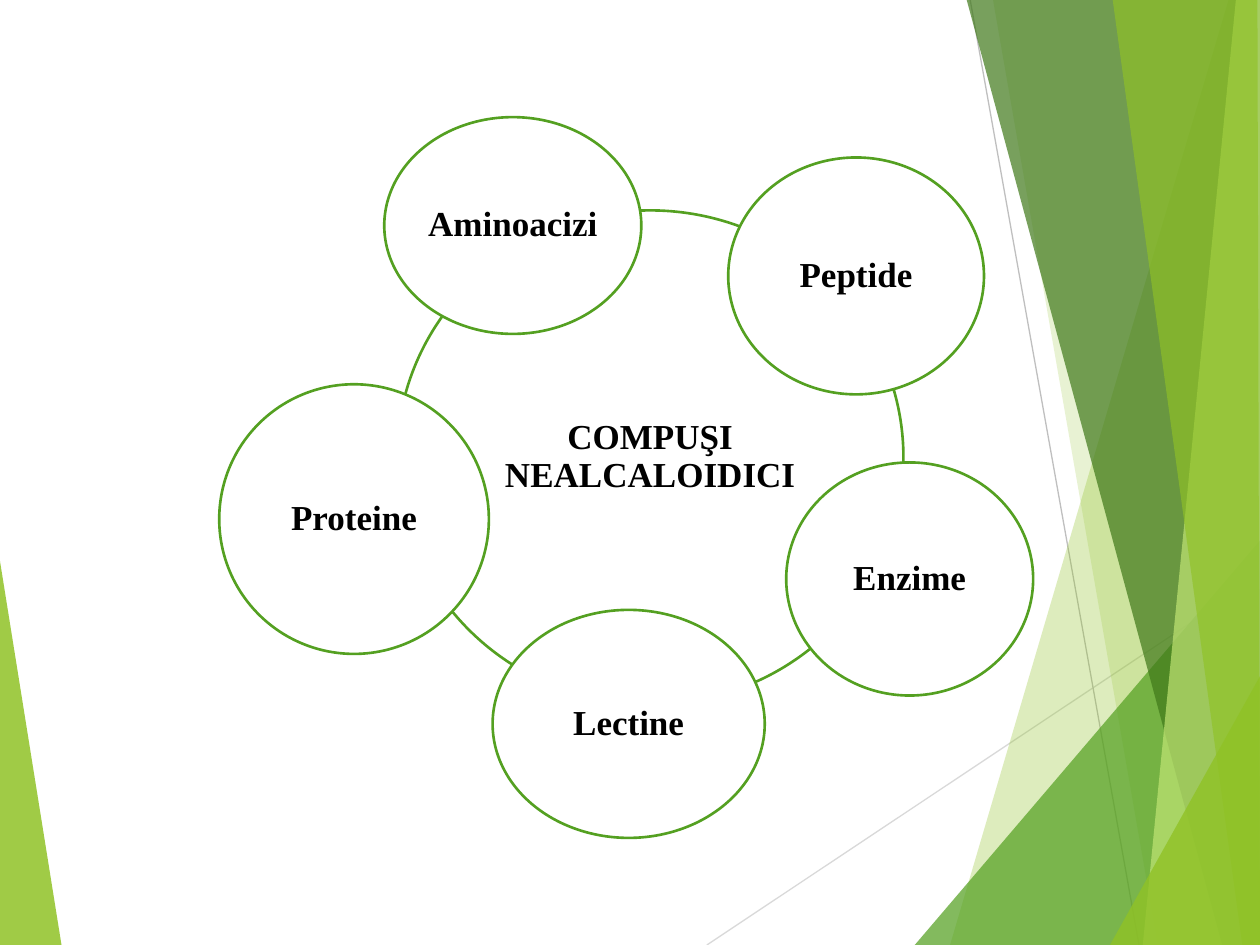
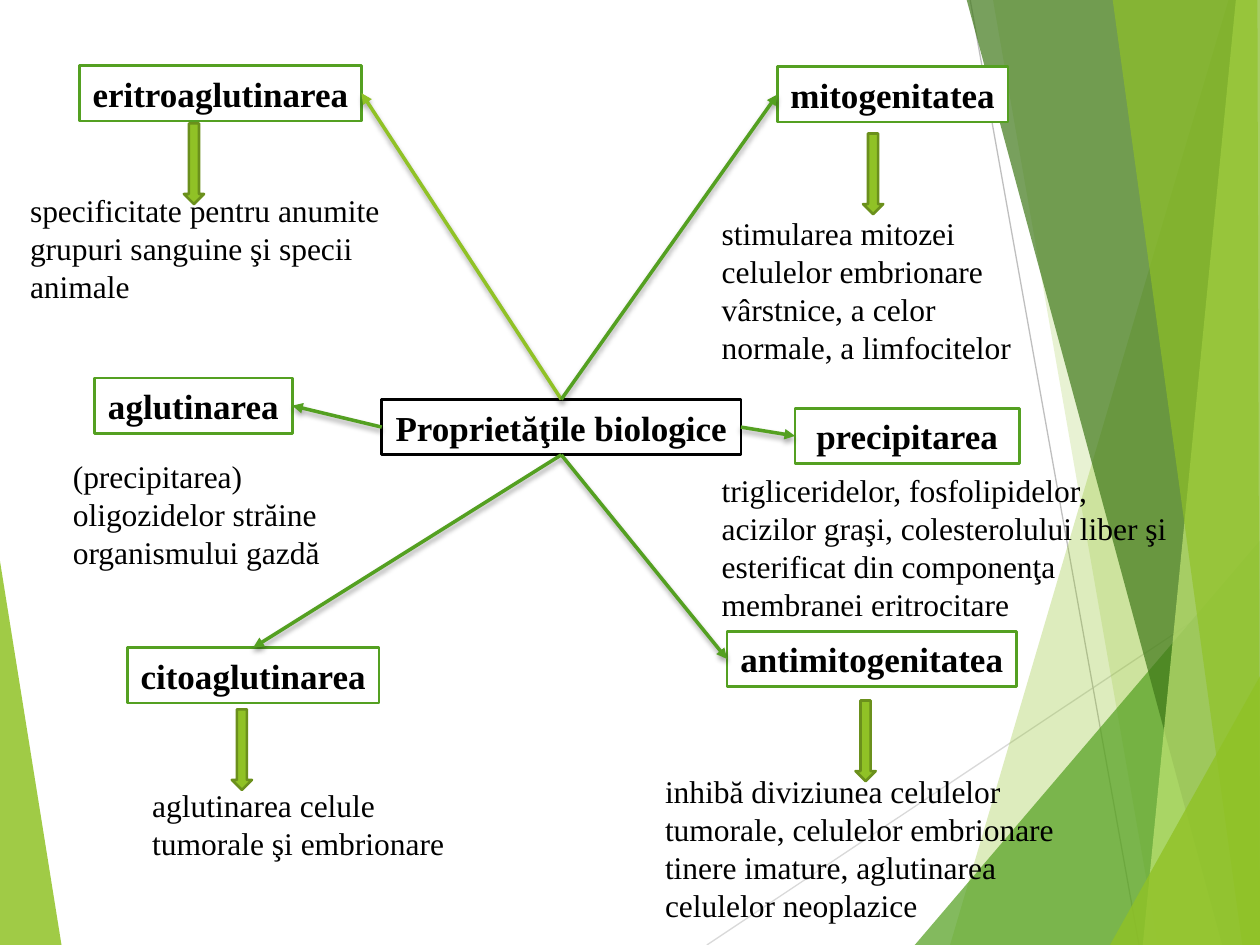
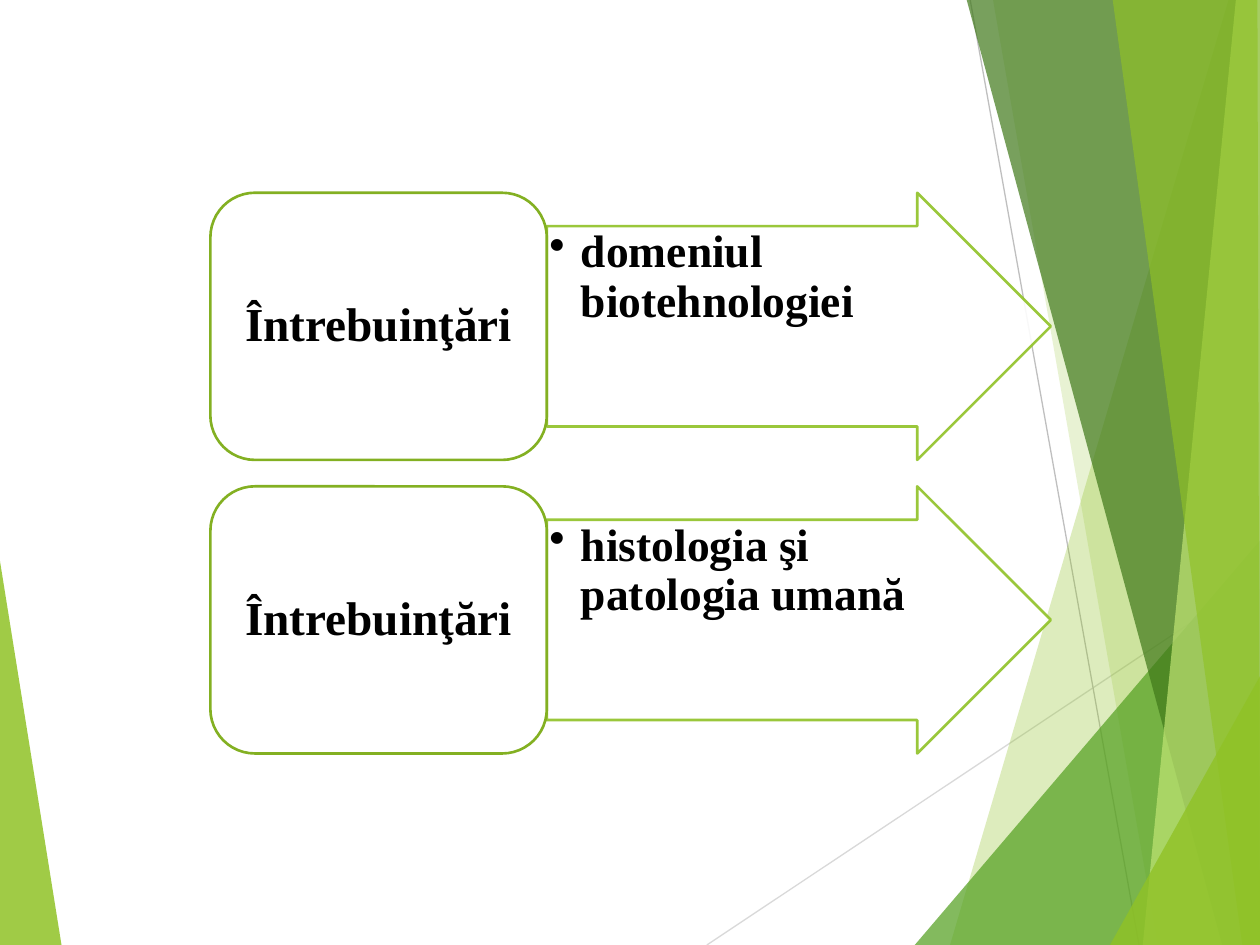
from lxml.etree import SubElement as Sub
from pptx import Presentation
from pptx.dml.color import RGBColor
from pptx.enum.shapes import MSO_CONNECTOR, MSO_SHAPE as Kind
from pptx.enum.text import MSO_ANCHOR as Anchor, PP_ALIGN as Align
from pptx.oxml.ns import qn
from pptx.util import Inches, Pt

FONT = "Times New Roman"
LIME, GREEN, PINE, PALE = "90C226", "54A021", "3F7819", "C0E474"
OLIVE, MOSS, WHITE, BLACK = "6B901C", "83B022", "FFFFFF", "000000"

# Backdrop: corner points, colour, opacity in percent
LEAF = ([(-0.01, 4.39), (0.49, 7.51), (-0.01, 7.5)], LIME, 85)
RAYS = [
    ((5.61, 7.5), (10.01, 4.57), "D9D9D9"),
    ((7.7, 0), (9.04, 7.5), "BFBFBF"),
]
WEDGES = [
    ([(9.75, 0), (7.54, 7.5), (10.02, 7.51), (10.01, 0)], LIME, 30),
    ([(7.88, -0.01), (9.19, 7.5), (10.01, 7.5), (10.01, -0.01)], LIME, 20),
    ([(7.26, 7.5), (10, 4.29), (10.01, 7.5)], GREEN, 72),
    ([(7.67, -0.01), (9.7, 7.5), (10.01, 7.5), (10.01, -0.01)], PINE, 70),
    ([(9.81, -0.01), (9.07, 7.5), (10.01, 7.5), (10, -0.01)], PALE, 70),
    ([(8.83, -0.01), (9.86, 7.5), (10, 7.5), (9.98, -0.01)], LIME, 65),
    ([(8.81, 7.5), (10.01, 5.35), (10.01, 7.5)], LIME, 80),
]

# Slide 1: the ring comes first, the circles lie over it
CIRCLES = [
    ("COMPUŞI NEALCALOIDICI", (3.15, 1.67, 4.02, 3.92)),
    ("Aminoacizi", (3.05, 0.93, 2.04, 1.72)),
    ("Enzime", (6.24, 3.67, 1.96, 1.85)),
    ("Lectine", (3.91, 4.84, 2.16, 1.81)),
    ("Proteine", (1.74, 3.05, 2.14, 2.14)),
    ("Peptide", (5.78, 1.25, 2.03, 1.88)),
]

# Slide 2
TOP, LEFT, BOTTOM, RIGHT = range(4)  # connection sites of a rectangle
TAG_H = 0.44
HUB = ("Proprietăţile biologice", (3.03, 3.17, 2.85))
# Tag, its left, top and width, hub site, tag site, line colour
TAGS = [
    ("eritroaglutinarea", (0.63, 0.52, 2.24), TOP, RIGHT, LIME),
    ("mitogenitatea", (6.17, 0.53, 1.83), TOP, LEFT, GREEN),
    ("citoaglutinarea", (1.01, 5.14, 2), BOTTOM, TOP, GREEN),
    ("antimitogenitatea", (5.77, 5.01, 2.3), BOTTOM, LEFT, GREEN),
    ("precipitarea", (6.31, 3.24, 1.78), RIGHT, LEFT, GREEN),
    ("aglutinarea", (0.75, 3, 1.57), LEFT, RIGHT, GREEN),
]
NOTES = [
    ("specificitate pentru anumite grupuri sanguine şi specii animale",
     (0.14, 1.47, 3.44, 1.01)),
    ("aglutinarea celule tumorale şi embrionare", (1.11, 6.19, 2.78, 0.71)),
    ("stimularea mitozei celulelor embrionare vârstnice, a celor normale, "
     "a limfocitelor", (5.63, 1.65, 2.76, 1.31)),
    ("inhibă diviziunea celulelor tumorale, celulelor embrionare tinere "
     "imature, aglutinarea celulelor neoplazice", (5.18, 6.08, 3.67, 1.31)),
    ("(precipitarea) oligozidelor străine organismului gazdă",
     (0.48, 3.58, 2.56, 1.01)),
    ("trigliceridelor, fosfolipidelor, acizilor graşi, colesterolului liber "
     "şi esterificat din componenţa membranei eritrocitare",
     (5.63, 3.69, 3.9, 1.31)),
]
DOWNS = [(1.46, 0.98), (1.84, 5.63), (6.85, 1.06), (6.79, 5.56)]

# Slide 3
USES = ["domeniul biotehnologiei", "histologia şi patologia umană"]
USE_X, USE_Y, USE_W, USE_H, USE_STEP, ARROW_W = 1.67, 1.53, 2.67, 2.12, 2.33, 4


def rgb(code):
    return RGBColor.from_string(code)


def inches(vals):
    return [Inches(v) for v in vals]


def write(shape, text, size=20, bold=True, align=Align.CENTER,
          anchor=Anchor.MIDDLE, pad=(0.03, 0.03), wrap=True, space=0.9,
          bullet=False):
    frame = shape.text_frame
    frame.word_wrap, frame.vertical_anchor = wrap, anchor
    frame.margin_left = frame.margin_right = Inches(pad[0])
    frame.margin_top = frame.margin_bottom = Inches(pad[1])
    para = frame.paragraphs[0]
    para.text, para.alignment, para.line_spacing = text, align, space
    if bullet:
        props = para._p.get_or_add_pPr()
        props.set("marL", str(Inches(0.25)))
        props.set("indent", str(-Inches(0.25)))
        Sub(props, qn("a:buChar"), char="•")
    font = para.runs[0].font
    font.name, font.size, font.bold = FONT, Pt(size), bold
    font.color.rgb = rgb(BLACK)


def paint(shape, fill, line=None, alpha=None):
    """Set fill and outline; alpha is the opacity of both in percent."""
    shape.shadow.inherit = False
    shape.fill.solid()
    shape.fill.fore_color.rgb = rgb(fill)
    if line:
        shape.line.color.rgb, shape.line.width = rgb(line), Pt(1.5)
    else:
        shape.line.fill.background()
    if alpha:
        for color in shape.element.xpath("p:spPr//a:srgbClr"):
            Sub(color, qn("a:alpha"), val=str(alpha * 1000))


def draw(slide, kind, box, fill, line, alpha=None):
    shape = slide.shapes.add_shape(kind, *inches(box))
    paint(shape, fill, line, alpha)
    return shape


def link(slide, start, end, color, width):
    """Add a straight line and return it with its empty effect list."""
    line = slide.shapes.add_connector(
        MSO_CONNECTOR.STRAIGHT, *inches(start + end))
    line.line.color.rgb, line.line.width = rgb(color), Pt(width)
    return line, Sub(line.element.spPr, qn("a:effectLst"))


def wedge(slide, points, color, alpha):
    (x, y), *rest = [inches(p) for p in points]
    path = slide.shapes.build_freeform(x, y)
    path.add_line_segments(rest, close=True)
    paint(path.convert_to_shape(), color, alpha=alpha)


def dress(layout, slide):
    """Build the backdrop on a still empty slide and move it to the layout."""
    for holder in list(layout.placeholders):
        layout.shapes.element.remove(holder.element)
    wedge(slide, *LEAF)
    for start, end, color in RAYS:
        link(slide, start, end, color, 0.75)
    for part in WEDGES:
        wedge(slide, *part)
    for shape in list(slide.shapes):
        layout.shapes.element.append(shape.element)


def show_ring(slide):
    for text, box in CIRCLES:
        write(draw(slide, Kind.OVAL, box, WHITE, GREEN), text)


def add_tag(slide, text, place, line):
    tag = draw(slide, Kind.RECTANGLE, place + (TAG_H,), WHITE, line)
    write(tag, text, pad=(0.1, 0.05), wrap=False, space=1)
    return tag


def show_map(slide):
    hub = add_tag(slide, *HUB, BLACK)
    tags = [add_tag(slide, text, place, GREEN) for text, place, *_ in TAGS]
    for text, box in NOTES:
        write(slide.shapes.add_textbox(*inches(box)), text, size=18,
              bold=False, align=Align.LEFT, anchor=Anchor.TOP,
              pad=(0.1, 0.05), space=1)
    for x, y in DOWNS:
        draw(slide, Kind.DOWN_ARROW, (x, y, 0.16, 0.64), LIME, OLIVE)
    for tag, (*_, out, into, color) in zip(tags, TAGS):
        line, effects = link(slide, (0, 0), (1, 1), color, 2)
        line.begin_connect(hub, out)
        line.end_connect(tag, into)
        Sub(line.line._get_or_add_ln(), qn("a:tailEnd"), type="triangle")
        shade = Sub(effects, qn("a:outerShdw"), blurRad=str(Pt(3)),
                    dist=str(Pt(2)), dir="5400000", rotWithShape="0")
        black = Sub(shade, qn("a:srgbClr"), val=BLACK)
        Sub(black, qn("a:alpha"), val="35000")


def show_uses(slide):
    for row, text in enumerate(USES):
        y = USE_Y + row * USE_STEP
        arrow = draw(slide, Kind.RIGHT_ARROW,
                     (USE_X + USE_W, y, ARROW_W, USE_H), WHITE, LIME, 90)
        arrow.adjustments[0] = 0.75
        write(arrow, text, size=26, align=Align.LEFT, anchor=Anchor.TOP,
              pad=(0.02, 0.02), bullet=True)
        head = draw(slide, Kind.ROUNDED_RECTANGLE,
                    (USE_X, y, USE_W, USE_H), WHITE, MOSS)
        write(head, "Întrebuinţări", size=27, pad=(0.11, 0.06))


def main():
    prs = Presentation()
    prs.slide_width, prs.slide_height = Inches(10), Inches(7.5)
    blank = prs.slide_layouts[6]
    ring, chart, uses = [prs.slides.add_slide(blank) for _ in range(3)]
    dress(blank, ring)
    show_ring(ring)
    show_map(chart)
    show_uses(uses)
    prs.save("out.pptx")


if __name__ == "__main__":
    main()
